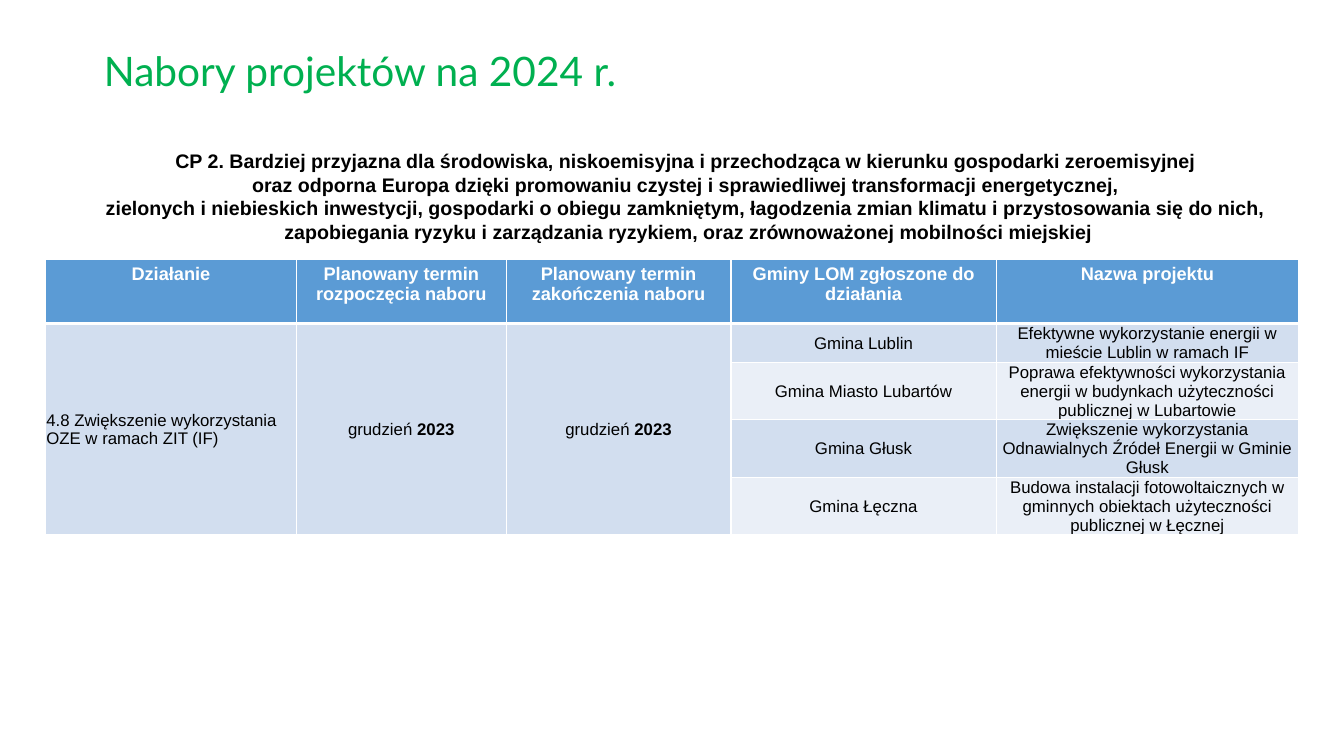
from dataclasses import dataclass

from lxml.etree import SubElement
from pptx import Presentation
from pptx.dml.color import RGBColor
from pptx.enum.text import MSO_ANCHOR as Anchor, MSO_AUTO_SIZE as Fit, PP_ALIGN as Align
from pptx.oxml.ns import qn
from pptx.table import _Cell as Cell
from pptx.text.text import _Paragraph as Para
from pptx.util import Inches, Pt


@dataclass(frozen=True)
class Theme:
    green: str = "00B050"
    blue: str = "5B9BD5"
    dark: str = "D2DEEF"
    light: str = "EAEFF7"
    white: str = "FFFFFF"
    black: str = "000000"
    head_font: str = "Lato"
    font: str = "Arial"
    title: float = 29
    lead: float = 14
    head: float = 13
    body: float = 12


@dataclass(frozen=True)
class Project:
    town: str
    name: str


@dataclass(frozen=True)
class Column:
    label: str
    width: float


THEME = Theme()
LEAD = [
    "CP 2. Bardziej przyjazna dla środowiska, niskoemisyjna i przechodząca w kierunku gospodarki zeroemisyjnej ",
    "oraz odporna Europa dzięki promowaniu czystej i sprawiedliwej transformacji energetycznej, ",
    "zielonych i niebieskich inwestycji, gospodarki o obiegu zamkniętym, łagodzenia zmian klimatu "
    "i przystosowania się do nich, ",
    "zapobiegania ryzyku i zarządzania ryzykiem, oraz zrównoważonej mobilności miejskiej",
]
COLUMNS = [
    Column("Działanie", 2.49),
    Column("Planowany termin rozpoczęcia naboru", 2.08),
    Column("Planowany termin zakończenia naboru", 2.23),
    Column("Gminy LOM zgłoszone do działania", 2.63),
    Column("Nazwa projektu", 3),
]
ACTION = "4.8 Zwiększenie wykorzystania OZE w ramach ZIT (IF)"
MONTH, YEAR = "grudzień ", "2023"
PROJECTS = [
    Project("Gmina Lublin", "Efektywne wykorzystanie energii w mieście Lublin w ramach IF"),
    Project("Gmina Miasto Lubartów",
            "Poprawa efektywności wykorzystania energii w budynkach użyteczności publicznej w Lubartowie"),
    Project("Gmina Głusk", "Zwiększenie wykorzystania Odnawialnych Źródeł Energii w Gminie Głusk"),
    Project("Gmina Łęczna",
            "Budowa instalacji fotowoltaicznych w gminnych obiektach użyteczności publicznej w Łęcznej"),
]
HEIGHTS = [0.64, 0.38, 0.57, 0.57, 0.57]


def add_run(para: Para, text: str, size: float, color: str,
            bold: bool = False, face: str = THEME.font) -> None:
    run = para.add_run()
    run.text = text
    font = run.font
    font.name, font.size, font.bold = face, Pt(size), bold
    font.color.rgb = RGBColor.from_string(color)


def style_cell(cell: Cell, color: str, top: float, base: float) -> None:
    props = cell._tc.get_or_add_tcPr()
    for side, width in (("L", 1), ("R", 1), ("T", top), ("B", base)):
        line = SubElement(props, qn(f"a:ln{side}"), w=str(Pt(width)))
        fill = SubElement(line, qn("a:solidFill"))
        SubElement(fill, qn("a:srgbClr"), val=THEME.white)
    cell.fill.solid()
    cell.fill.fore_color.rgb = RGBColor.from_string(color)


def fill_body(cell: Cell, text: str, strong: str = "", align: Align = Align.CENTER) -> None:
    para = cell.text_frame.paragraphs[0]
    para.alignment = align
    add_run(para, text, THEME.body, THEME.black)
    if strong:
        add_run(para, strong, THEME.body, THEME.black, True)


def add_title(slide) -> None:
    title = slide.shapes.title
    title.left, title.top = Inches(0.93), Inches(0)
    title.width, title.height = Inches(11.5), Inches(1.45)
    frame = title.text_frame
    frame.auto_size, frame.vertical_anchor = Fit.NONE, Anchor.MIDDLE
    para = frame.paragraphs[0]
    para.alignment, para.line_spacing = Align.LEFT, 0.9
    add_run(para, "Nabory projektów na 2024 r.", THEME.title, THEME.green, face=THEME.head_font)


def add_lead(slide) -> None:
    box = slide.shapes.add_textbox(Inches(0.93), Inches(1.43), Inches(11.8), Inches(1.04))
    box.text_frame.word_wrap = False
    para = box.text_frame.paragraphs[0]
    para.alignment = Align.CENTER
    for i, line in enumerate(LEAD):
        if i:
            para.add_line_break()
        add_run(para, line, THEME.lead, THEME.black, True)


def add_calls(slide) -> None:
    total = sum(col.width for col in COLUMNS)
    table = slide.shapes.add_table(len(HEIGHTS), len(COLUMNS), Inches(0.45), Inches(2.57),
                                   Inches(total), Inches(sum(HEIGHTS))).table
    for row, height in zip(table.rows, HEIGHTS):
        row.height = Inches(height)

    # Header row
    for i, col in enumerate(COLUMNS):
        table.columns[i].width = Inches(col.width)
        cell = table.cell(0, i)
        style_cell(cell, THEME.blue, 1, 3)
        para = cell.text_frame.paragraphs[0]
        para.alignment = Align.CENTER
        add_run(para, col.label, THEME.head, THEME.white, True)

    # Banded body, with the first three columns merged downwards
    for r in range(1, len(HEIGHTS)):
        for c in range(len(COLUMNS)):
            cell = table.cell(r, c)
            style_cell(cell, THEME.dark if c < 3 or r % 2 else THEME.light, 3 if r == 1 else 1, 1)
            cell.vertical_anchor = Anchor.MIDDLE
            cell.margin_left = cell.margin_right = cell.margin_top = Inches(0.01)
            cell.margin_bottom = 0
    for c in range(3):
        table.cell(1, c).merge(table.cell(len(PROJECTS), c))

    # Body text
    fill_body(table.cell(1, 0), ACTION, align=Align.LEFT)
    for c in (1, 2):
        fill_body(table.cell(1, c), MONTH, YEAR)
    for r, item in enumerate(PROJECTS, 1):
        fill_body(table.cell(r, 3), item.town)
        fill_body(table.cell(r, 4), item.name)


def main() -> None:
    deck = Presentation()
    deck.slide_width, deck.slide_height = Inches(13.33), Inches(7.5)
    slide = deck.slides.add_slide(deck.slide_layouts[5])
    add_title(slide)
    add_calls(slide)
    add_lead(slide)
    deck.save("out.pptx")


if __name__ == "__main__":
    main()
